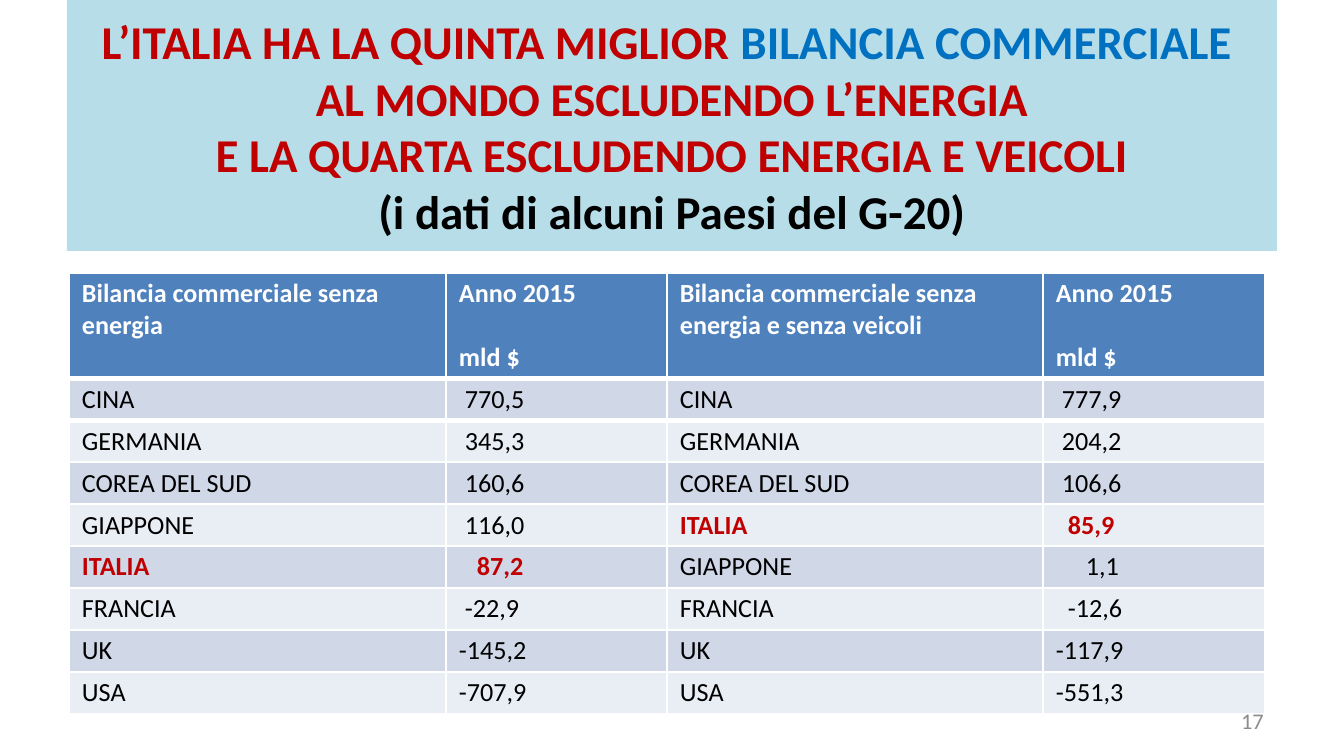
from lxml import etree
from pptx import Presentation
from pptx import util as u
from pptx.dml import color
from pptx.enum import text
from pptx.oxml import ns

COLORS = {
    "red": "C00000", "blue": "0070C0", "black": "000000", "white": "FFFFFF",
    "grey": "8C8C8C", "banner": "B7DEE8", "header": "4F81BD",
    "band": "D0D8E8", "light": "E9EDF4",
}


def px(length):
    return u.Emu(round(length * 914400 / 134.4))


def rgb(name):
    return color.RGBColor.from_string(COLORS[name])


class SlideBuilder:
    font = "Calibri"
    inset_x, inset_y, indent = 13, 5, 6

    def __init__(self, prs):
        self.slide = prs.slides.add_slide(prs.slide_layouts[5])

    def run(self, paragraph, wording, size, ink, bold=False):
        run = paragraph.add_run()
        run.text = wording
        run.font.name, run.font.size = self.font, u.Pt(size)
        run.font.bold = bold
        run.font.color.rgb = rgb(ink)

    def place(self, shape, box):
        shape.left, shape.top, shape.width, shape.height = map(px, box)

    def title(self, box, lines, size, fill):
        banner = self.slide.shapes.title
        self.place(banner, box)
        banner.fill.solid()
        banner.fill.fore_color.rgb = rgb(fill)
        frame = banner.text_frame
        frame.auto_size = text.MSO_AUTO_SIZE.NONE
        frame.vertical_anchor = text.MSO_ANCHOR.MIDDLE
        paragraph = frame.paragraphs[0]
        paragraph.alignment = text.PP_ALIGN.CENTER
        for number, line in enumerate(lines):
            if number:
                paragraph.add_line_break()
            for wording, ink in line:
                self.run(paragraph, wording, size, ink, True)

    def border(self, cell, side, points):
        line = etree.Element(ns.qn(f"a:{side}"), w=str(u.Pt(points)))
        fill = etree.SubElement(line, ns.qn("a:solidFill"))
        etree.SubElement(fill, ns.qn("a:srgbClr"), val=COLORS["white"])
        cell._tc.get_or_add_tcPr().insert(0, line)

    def cell(self, cell, lines, fill, ink, bold, steps=0):
        cell.fill.solid()
        cell.fill.fore_color.rgb = rgb(fill)
        cell.margin_left = px(self.inset_x + steps * self.indent)
        cell.margin_right = px(self.inset_x)
        cell.margin_top = cell.margin_bottom = px(self.inset_y)
        for number, line in enumerate(lines):
            frame = cell.text_frame
            paragraph = frame.add_paragraph() if number else frame.paragraphs[0]
            if number:
                paragraph.space_before = u.Pt(17)
            self.run(paragraph, line, 14, ink, bold)

    def table(self, left, top, widths, header_height, row_height, headings, rows):
        height = header_height + row_height * len(rows)
        table = self.slide.shapes.add_table(
            len(rows) + 1, len(widths), px(left), px(top), px(sum(widths)), px(height)).table
        for column, width in zip(table.columns, widths):
            column.width = px(width)
        for number, row in enumerate(table.rows):
            row.height = px(row_height if number else header_height)
        for col, heading in enumerate(headings):
            self.cell(table.cell(0, col), heading, "header", "white", True)
            self.border(table.cell(0, col), "lnB", 3)
            self.border(table.cell(1, col), "lnT", 3)
        for number, balances in enumerate(rows, 1):
            fill = "band" if number % 2 else "light"
            for pair, (country, value, steps) in enumerate(balances):
                bold = country == "ITALIA"
                ink = "red" if bold else "black"
                self.cell(table.cell(number, 2 * pair), [country], fill, ink, bold)
                self.cell(table.cell(number, 2 * pair + 1), [value], fill, ink, bold, steps)

    def page_number(self, box, wording):
        frame = self.slide.shapes.add_textbox(*map(px, box)).text_frame
        frame.word_wrap = True
        frame.vertical_anchor = text.MSO_ANCHOR.MIDDLE
        frame.paragraphs[0].alignment = text.PP_ALIGN.RIGHT
        self.run(frame.paragraphs[0], wording, 12, "grey")


def main():
    prs = Presentation()
    prs.slide_width, prs.slide_height = px(1344), px(756)
    page = SlideBuilder(prs)
    page.title((67, 0, 1210, 251), [
        [("L’ITALIA HA LA QUINTA MIGLIOR ", "red"), ("BILANCIA COMMERCIALE ", "blue")],
        [("AL MONDO ESCLUDENDO L’ENERGIA", "red")],
        [("E LA QUARTA ESCLUDENDO ENERGIA E VEICOLI", "red")],
        [("(i dati di alcuni Paesi del G-20)", "black")],
    ], 25.2, "banner")
    year = ["Anno 2015", "mld $"]
    headings = [["Bilancia commerciale senza energia"], year,
                ["Bilancia commerciale senza energia e senza veicoli"], year]
    without_energy = [
        ("CINA", "770,5", 1), ("GERMANIA", "345,3", 1), ("COREA DEL SUD", "160,6", 1),
        ("GIAPPONE", "116,0", 1), ("ITALIA", "87,2", 3), ("FRANCIA", "-22,9", 1),
        ("UK", "-145,2", 0), ("USA", "-707,9", 0),
    ]
    without_vehicles = [
        ("CINA", "777,9", 1), ("GERMANIA", "204,2", 1), ("COREA DEL SUD", "106,6", 1),
        ("ITALIA", "85,9", 2), ("GIAPPONE", "1,1", 5), ("FRANCIA", "-12,6", 2),
        ("UK", "-117,9", 0), ("USA", "-551,3", 0),
    ]
    page.table(69, 273, [377, 221, 376, 222], 104, 42, headings,
               list(zip(without_energy, without_vehicles)))
    page.page_number((964, 701, 313, 40), "17")
    prs.save("out.pptx")


if __name__ == "__main__":
    main()
